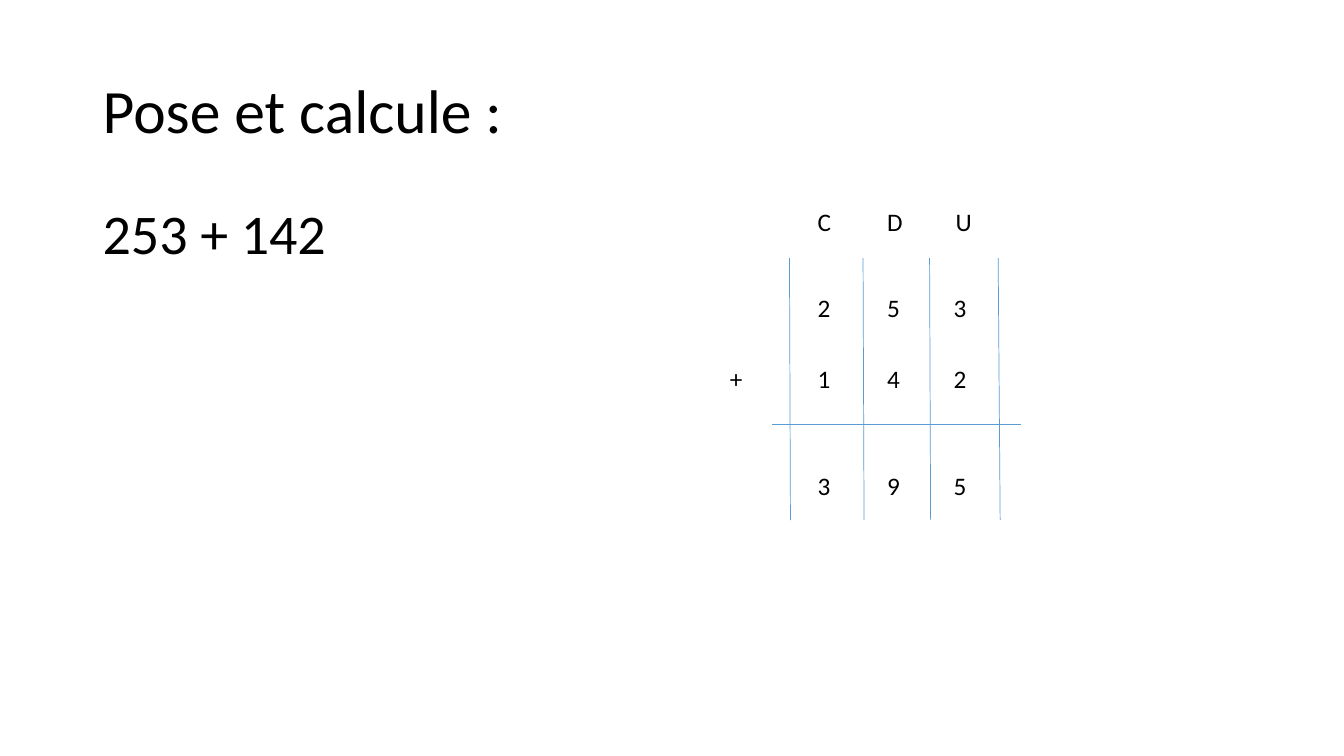
"""Build a slide that sets out the addition 253 + 142 in columns."""
from lxml import etree
from pptx import Presentation
from pptx.dml.color import RGBColor
from pptx.enum.shapes import MSO_CONNECTOR
from pptx.enum.text import MSO_ANCHOR, MSO_AUTO_SIZE
from pptx.oxml.ns import qn
from pptx.util import Inches, Pt

COLORS = {"text": "000000", "rule": "5B9BD5"}

prs = Presentation()
prs.slide_width, prs.slide_height = Inches(13.33), Inches(7.5)
slide = prs.slides.add_slide(prs.slide_layouts[6])


def add_text(text, left, top, width, height, size):
    frame = slide.shapes.add_textbox(
        Inches(left), Inches(top), Inches(width), Inches(height)).text_frame
    frame.word_wrap = True
    paragraph = frame.paragraphs[0]
    paragraph.text = text
    paragraph.font.name = "Calibri"
    paragraph.font.size = Pt(size)
    paragraph.font.color.rgb = RGBColor.from_string(COLORS["text"])
    return frame


def add_rule(x1, y1, x2, y2):
    rule = slide.shapes.add_connector(
        MSO_CONNECTOR.STRAIGHT, Inches(x1), Inches(y1), Inches(x2), Inches(y2))
    rule.line.color.rgb = RGBColor.from_string(COLORS["rule"])
    rule.line.width = Pt(0.5)
    etree.SubElement(rule._element.spPr, qn("a:effectLst"))


title = add_text("Pose et calcule :", 0.92, 0.4, 11.5, 1.45, 44)
title.vertical_anchor = MSO_ANCHOR.MIDDLE
title.paragraphs[0].line_spacing = 0.9

sum_to_solve = add_text("253 + 142", 0.92, 2, 11.5, 4.76, 40)
sum_to_solve.paragraphs[0].line_spacing = 0.9
sum_to_solve.paragraphs[0].space_before = Pt(10)

for x_top, x_bottom in [(7.83, 7.84), (8.56, 8.57), (9.22, 9.23), (9.9, 9.92)]:
    add_rule(x_top, 2.56, x_bottom, 5.16)

column_lefts = [7.14, 8.01, 8.7, 9.36]
for top, row in [(2, " CDU"), (2.85, " 253"), (3.56, "+142"), (4.62, " 395")]:
    for left, symbol in zip(column_lefts, row):
        if symbol != " ":
            nudge = 0.02 if symbol == "U" else 0
            cell = add_text(symbol, left + nudge, top, 0.39, 0.4, 18)
            cell.auto_size = MSO_AUTO_SIZE.SHAPE_TO_FIT_TEXT

add_rule(7.66, 4.21, 10.13, 4.21)

prs.save("out.pptx")
